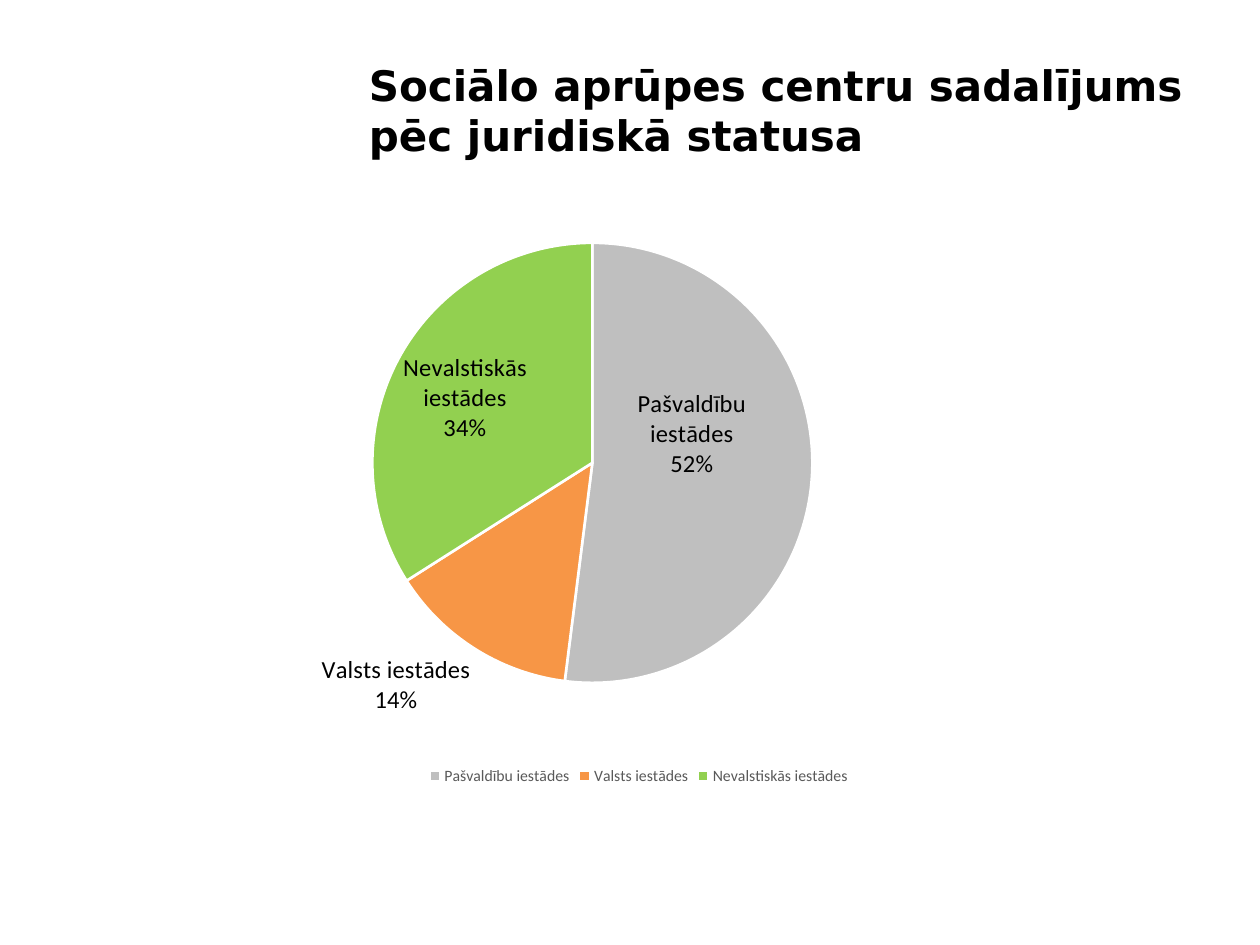
from dataclasses import dataclass
from typing import Optional

import lxml.etree
import pptx
import pptx.chart.data
import pptx.dml.color
import pptx.enum.chart
import pptx.enum.text
import pptx.oxml.ns
import pptx.util

Inches = pptx.util.Inches
Pt = pptx.util.Pt
RGB = pptx.dml.color.RGBColor
qn = pptx.oxml.ns.qn
LabelPos = pptx.enum.chart.XL_LABEL_POSITION


@dataclass(frozen=True)
class Theme:
    title_font: str = "DejaVu Sans"
    chart_font: str = "Calibri"
    title_size: int = 24
    chart_size: int = 10
    label_size: int = 14
    legend_size: int = 9
    text: str = "000000"
    legend: str = "595959"
    border: str = "FFFFFF"
    gray: str = "BFBFBF"
    orange: str = "F79646"
    green: str = "92D050"


@dataclass(frozen=True)
class Slice:
    name: str
    value: int
    color: str
    position: LabelPos
    offset: Optional[tuple[float, float]] = None


THEME = Theme()
SLICES = [
    Slice("Pašvaldību iestādes", 52, THEME.gray, LabelPos.CENTER, (-0.01, -0.06)),
    Slice("Valsts iestādes", 14, THEME.orange, LabelPos.OUTSIDE_END),
    Slice("Nevalstiskās iestādes", 34, THEME.green, LabelPos.CENTER, (-0.03, -0.02)),
]


def style_font(font, name: str, size: int, color: str, bold: bool = False) -> None:
    font.name = name
    font.size = Pt(size)
    font.bold = bold
    font.color.rgb = RGB.from_string(color)


def make_layout(**values) -> lxml.etree._Element:
    layout = lxml.etree.Element(qn("c:layout"))
    manual = lxml.etree.SubElement(layout, qn("c:manualLayout"))
    for tag, value in values.items():
        lxml.etree.SubElement(manual, qn(f"c:{tag}")).set("val", str(value))
    return layout


def add_title(s, text: str) -> None:
    sp = s.shapes.add_textbox(Inches(2.83), Inches(0.42), Inches(6.67), Inches(1.13))
    tf = sp.text_frame
    tf.word_wrap = True
    tf.vertical_anchor = pptx.enum.text.MSO_ANCHOR.TOP
    r = tf.paragraphs[0].add_run()
    r.text = text
    style_font(r.font, THEME.title_font, THEME.title_size, THEME.text, True)


def style_slice(series, index: int, item: Slice) -> None:
    point = series.points[index]
    point.format.fill.solid()
    point.format.fill.fore_color.rgb = RGB.from_string(item.color)
    point.format.line.color.rgb = RGB.from_string(THEME.border)
    point.format.line.width = Pt(1.5)
    label = point.data_label
    style_font(label.font, THEME.chart_font, THEME.label_size, THEME.text)
    label.position = item.position


def finish_labels(chart, slices: list[Slice]) -> None:
    for label in chart.element.iter(qn("c:dLbl")):
        item = slices[int(label.find(qn("c:idx")).get("val"))]
        for tag, value in (("showVal", "0"), ("showCatName", "1"), ("showPercent", "1")):
            label.find(qn(f"c:{tag}")).set("val", value)
        separator = lxml.etree.SubElement(label, qn("c:separator"))
        separator.text = "\n"
        if item.offset:
            x, y = item.offset
            label.find(qn("c:idx")).addnext(make_layout(x=x, y=y))


def add_pie(s, slices: list[Slice]) -> None:
    data = pptx.chart.data.CategoryChartData()
    data.categories = [item.name for item in slices]
    data.add_series("Series 1", [item.value for item in slices])
    chart = s.shapes.add_chart(
        pptx.enum.chart.XL_CHART_TYPE.PIE,
        Inches(0.98), Inches(1.55), Inches(8.18), Inches(4.72), data,
    ).chart
    style_font(chart.font, THEME.chart_font, THEME.chart_size, THEME.text)
    chart.has_title = False
    chart.has_legend = True
    chart.legend.position = pptx.enum.chart.XL_LEGEND_POSITION.BOTTOM
    chart.legend.include_in_layout = False
    style_font(chart.legend.font, THEME.chart_font, THEME.legend_size, THEME.legend)

    plot = chart.plots[0]
    plot.vary_by_categories = True
    series = plot.series[0]
    labels = series.data_labels
    labels.show_value = False
    labels.show_category_name = True
    labels.show_percentage = True
    style_font(labels.font, THEME.chart_font, THEME.label_size, THEME.text)
    for index, item in enumerate(slices):
        style_slice(series, index, item)
    finish_labels(chart, slices)

    area = chart.element.find(f".//{qn('c:plotArea')}")
    for old in area.findall(qn("c:layout")):
        area.remove(old)
    area.insert(0, make_layout(
        layoutTarget="inner", xMode="edge", yMode="edge", x=0.24, y=0.08, w=0.43, h=0.74,
    ))


def main() -> None:
    prs = pptx.Presentation()
    prs.slide_width = Inches(10)
    prs.slide_height = Inches(7.5)
    s = prs.slides.add_slide(prs.slide_layouts[6])
    add_title(s, "Sociālo aprūpes centru sadalījums pēc juridiskā statusa")
    add_pie(s, SLICES)
    prs.save("out.pptx")


if __name__ == "__main__":
    main()
